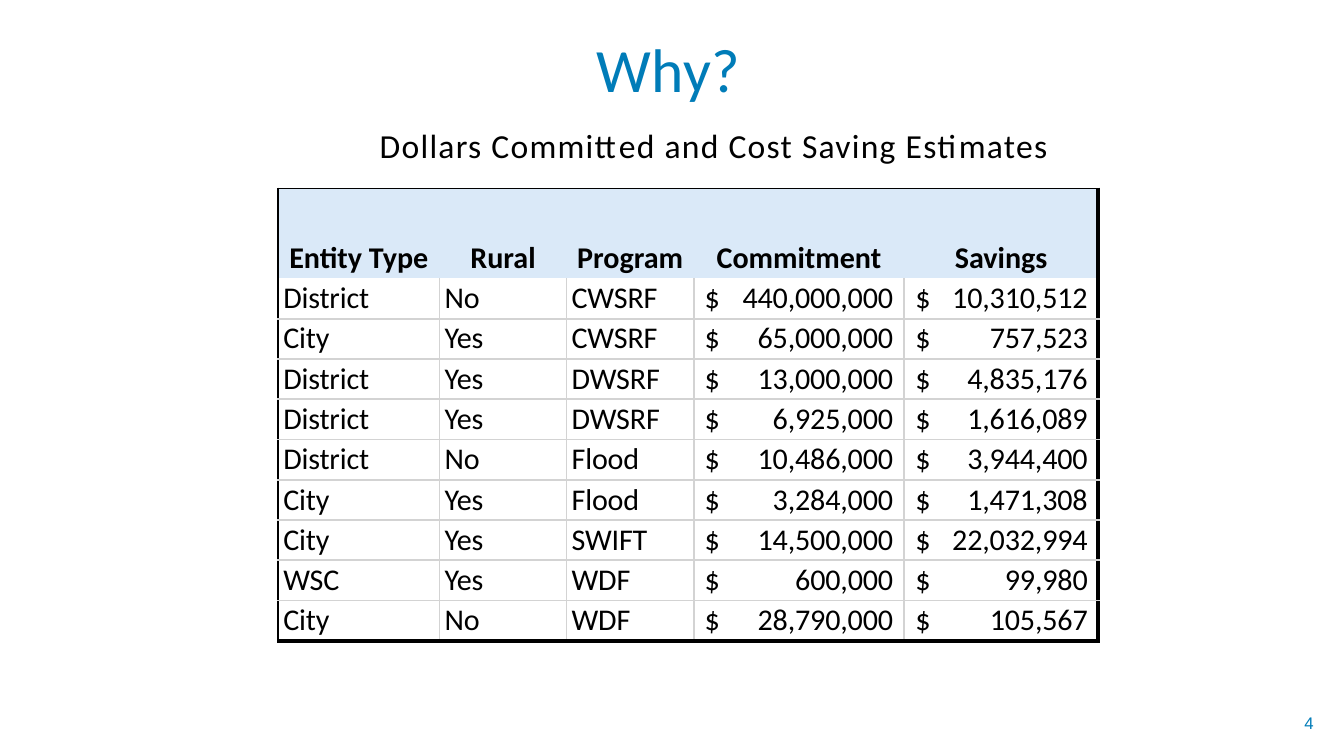
from dataclasses import dataclass

from lxml.etree import SubElement
from pptx import Presentation
from pptx.dml.color import RGBColor
from pptx.enum.text import MSO_ANCHOR, MSO_AUTO_SIZE, PP_ALIGN
from pptx.oxml import parse_xml
from pptx.oxml.ns import nsdecls, qn
from pptx.util import Inches, Pt


@dataclass(frozen=True)
class Theme:
    accent: str = "007CB8"
    ink: str = "000000"
    header: str = "DAE9F8"
    rule: str = "D3D3D3"
    font: str = "Calibri"
    number_font: str = "Arial"
    title_size: float = 44
    subtitle_size: float = 24
    table_size: float = 21.5
    number_size: float = 12
    thin: float = 1.5
    thick: float = 3


@dataclass(frozen=True)
class Box:
    left: int
    top: int
    width: int
    height: int

    def place(self, shape):
        shape.left, shape.top = self.left, self.top
        shape.width, shape.height = self.width, self.height


THEME = Theme()
SLIDE_WIDTH, SLIDE_HEIGHT = Inches(13.33), Inches(7.5)

HEADINGS = ("Entity Type", "Rural", "Program", "Commitment", "Savings")
PROJECTS = (
    ("District", "No", "CWSRF", 440000000, 10310512),
    ("City", "Yes", "CWSRF", 65000000, 757523),
    ("District", "Yes", "DWSRF", 13000000, 4835176),
    ("District", "Yes", "DWSRF", 6925000, 1616089),
    ("District", "No", "Flood", 10486000, 3944400),
    ("City", "Yes", "Flood", 3284000, 1471308),
    ("City", "Yes", "SWIFT", 14500000, 22032994),
    ("WSC", "Yes", "WDF", 600000, 99980),
    ("City", "No", "WDF", 28790000, 105567),
)
COLUMN_SHARES = (1.6, 1.26, 1.26, 2.09, 1.92)
HEADER_ROWS = 2.23  # header height, counted in body rows
MONEY_TABS = {3: 1.87, 4: 1.71}  # right edge of the figures, by column
TEXT_INSET, MONEY_INSET = 0.05, 0.11


def share(left, top, width, height):
    """Box given in percent of the slide's size."""
    return Box(round(SLIDE_WIDTH * left / 100), round(SLIDE_HEIGHT * top / 100),
               round(SLIDE_WIDTH * width / 100), round(SLIDE_HEIGHT * height / 100))


def write(frame, text, size, color=THEME.ink, font=THEME.font, bold=False,
          align=PP_ALIGN.LEFT, spacing=0, tab=None):
    """Write one paragraph; tab is the place of a right tab stop in inches."""
    paragraph = frame.paragraphs[0]
    paragraph.text = text
    paragraph.alignment = align
    if tab:
        stops = SubElement(paragraph._p.get_or_add_pPr(), qn("a:tabLst"))
        SubElement(stops, qn("a:tab"), pos=str(Inches(tab)), algn="r")
    for run in paragraph.runs:
        run.font.name = font
        run.font.size = Pt(size)
        run.font.bold = bold
        run.font.color.rgb = RGBColor.from_string(color)
        run._r.get_or_add_rPr().set("spc", str(round(spacing * 100)))


def set_up_frame(frame, top=0):
    frame.word_wrap = True
    frame.auto_size = MSO_AUTO_SIZE.NONE
    frame.vertical_anchor = MSO_ANCHOR.TOP
    frame.margin_left = frame.margin_right = frame.margin_bottom = 0
    frame.margin_top = Inches(top)


def add_title(slide, box, text):
    title = slide.shapes.title
    box.place(title)
    set_up_frame(title.text_frame, top=0.13)
    write(title.text_frame, text, THEME.title_size, THEME.accent,
          align=PP_ALIGN.CENTER, spacing=0.3)


def add_label(slide, box, text, size, **style):
    label = slide.shapes.add_textbox(box.left, box.top, box.width, box.height)
    set_up_frame(label.text_frame)
    write(label.text_frame, text, size, **style)


def set_borders(cell, **sides):
    """Each side L, R, T, B takes (colour, points); a missing side has no line."""
    properties = cell._tc.get_or_add_tcPr()
    for position, side in enumerate("LRTB"):
        color, width = sides.get(side) or (None, 0)
        fill = (f'<a:solidFill><a:srgbClr val="{color}"/></a:solidFill>'
                if color else "<a:noFill/>")
        properties.insert(position, parse_xml(
            f'<a:ln{side} {nsdecls("a")} w="{Pt(width)}">{fill}</a:ln{side}>'))


def format_heading(cell, text, first, last):
    cell.fill.solid()
    cell.fill.fore_color.rgb = RGBColor.from_string(THEME.header)
    cell.vertical_anchor = MSO_ANCHOR.BOTTOM
    cell.margin_bottom = Inches(0.02)
    write(cell.text_frame, text, THEME.table_size, bold=True, align=PP_ALIGN.CENTER)
    edge = (THEME.ink, THEME.thin)
    set_borders(cell, T=edge, L=edge if first else None,
                R=(THEME.ink, THEME.thick) if last else None)


def format_value(cell, value, column, row):
    cell.fill.background()
    cell.vertical_anchor = MSO_ANCHOR.MIDDLE
    tab = MONEY_TABS.get(column)
    cell.margin_left = Inches(MONEY_INSET if tab else TEXT_INSET)
    text = f"$\t{value:,}" if tab else value
    write(cell.text_frame, text, THEME.table_size, spacing=-0.1, tab=tab)
    rule, frame = (THEME.rule, THEME.thin), (THEME.ink, THEME.thick)
    set_borders(cell,
                L=(THEME.ink, THEME.thin) if column == 0 else rule,
                R=frame if column == len(HEADINGS) - 1 else rule,
                T=rule if row > 1 else None,
                B=frame if row == len(PROJECTS) else rule)


def add_savings_table(slide, box):
    table = slide.shapes.add_table(len(PROJECTS) + 1, len(HEADINGS), box.left,
                                   box.top, box.width, box.height).table
    table.horz_banding = table.first_row = False
    for column, part in zip(table.columns, COLUMN_SHARES):
        column.width = round(box.width * part / sum(COLUMN_SHARES))
    unit = box.height / (len(PROJECTS) + HEADER_ROWS)
    for index, row in enumerate(table.rows):
        row.height = round(unit * (1 if index else HEADER_ROWS))
    for r, values in enumerate((HEADINGS, *PROJECTS)):
        for c, value in enumerate(values):
            cell = table.cell(r, c)
            cell.margin_left = cell.margin_right = 0
            cell.margin_top = cell.margin_bottom = 0
            if r == 0:
                format_heading(cell, value, c == 0, c == len(HEADINGS) - 1)
            else:
                format_value(cell, value, c, r)


def main():
    deck = Presentation()
    deck.slide_width, deck.slide_height = SLIDE_WIDTH, SLIDE_HEIGHT
    slide = deck.slides.add_slide(deck.slide_layouts[5])
    add_title(slide, share(12.23, 2.4, 75, 12.13), "Why?")
    add_label(slide, share(97.05, 94.27, 2, 2.8), "4", THEME.number_size,
              color=THEME.accent, font=THEME.number_font)
    add_label(slide, share(28.25, 16.5, 49.9, 5.73),
              "Dollars Committed and Cost Saving Estimates",
              THEME.subtitle_size, spacing=0.9)
    add_savings_table(slide, share(20.7, 24.93, 61, 59.87))
    deck.save("out.pptx")


if __name__ == "__main__":
    main()
